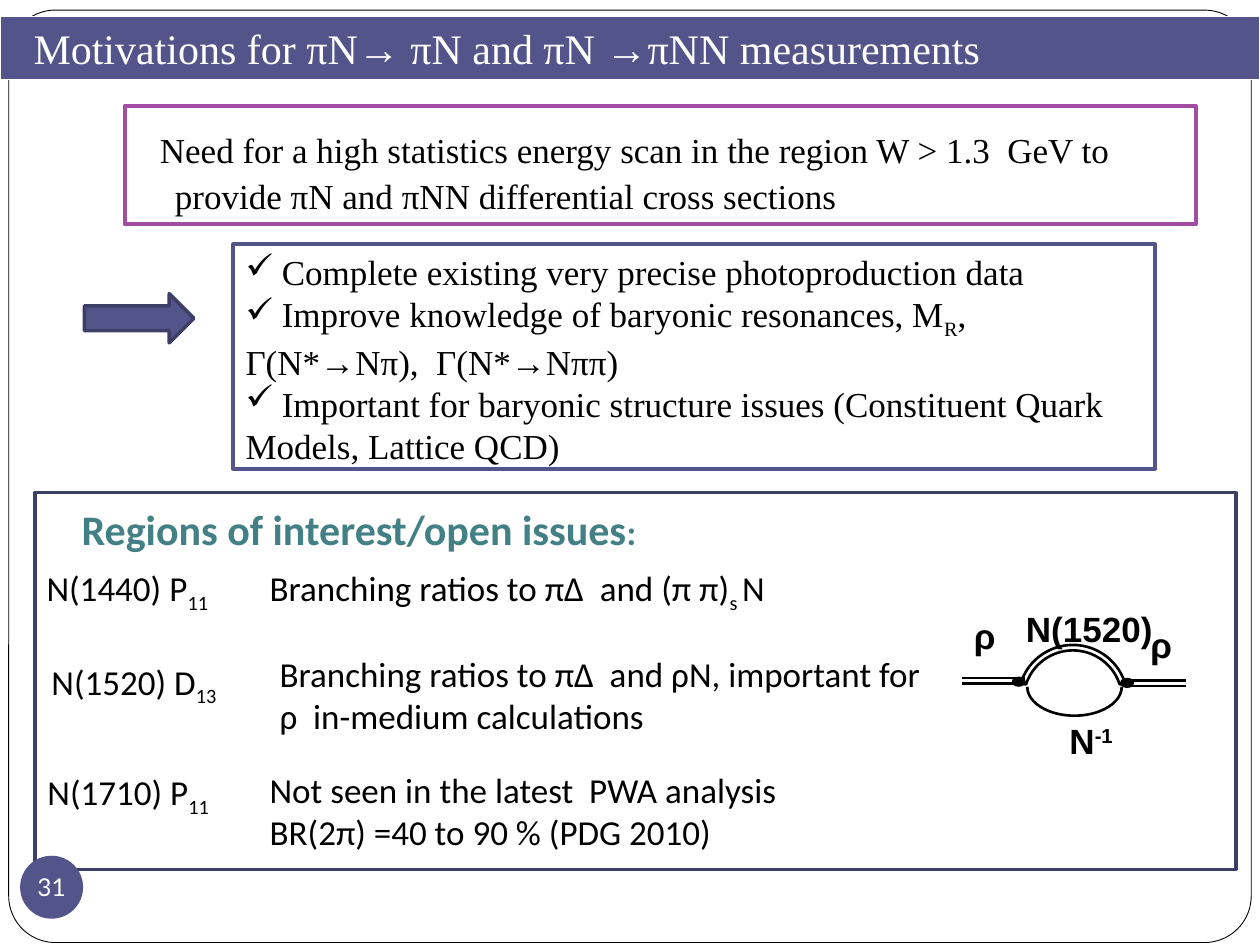
from dataclasses import dataclass

from lxml import etree
from pptx import Presentation
from pptx.dml.color import RGBColor
from pptx.enum.shapes import MSO_CONNECTOR, MSO_SHAPE
from pptx.enum.text import MSO_ANCHOR, PP_ALIGN
from pptx.oxml.ns import qn
from pptx.util import Pt

RECTANGLE = MSO_SHAPE.RECTANGLE
ROUNDED = MSO_SHAPE.ROUNDED_RECTANGLE
OVAL = MSO_SHAPE.OVAL
ARROW = MSO_SHAPE.RIGHT_ARROW
ARC = MSO_SHAPE.ARC
BLOCK_ARC = MSO_SHAPE.BLOCK_ARC
STRAIGHT = MSO_CONNECTOR.STRAIGHT
LEFT, CENTER = PP_ALIGN.LEFT, PP_ALIGN.CENTER
TOP, MIDDLE = MSO_ANCHOR.TOP, MSO_ANCHOR.MIDDLE

BLACK = RGBColor(0x00, 0x00, 0x00)
WHITE = RGBColor(0xFF, 0xFF, 0xFF)
INDIGO = RGBColor(0x53, 0x54, 0x8A)
DARK_INDIGO = RGBColor(0x3D, 0x3E, 0x66)
PURPLE = RGBColor(0xA0, 0x4D, 0xA3)
TEAL = RGBColor(0x43, 0x80, 0x86)

SERIF, SANS, LABEL, NUMBER = "Times New Roman", "Calibri", "Arial", "Lato"
DEGREE = 0.6  # angle adjustments count 60000ths, scaled by 100000


@dataclass(frozen=True)
class Box:
    left: float
    top: float
    width: float
    height: float

    def lengths(self):
        return Pt(self.left), Pt(self.top), Pt(self.width), Pt(self.height)


@dataclass(frozen=True)
class Style:
    font: str
    size: float = 20
    color: RGBColor = BLACK
    bold: bool | None = None
    align: PP_ALIGN = LEFT


@dataclass(frozen=True)
class Run:
    text: str
    baseline: int = 0
    size: float | None = None


@dataclass(frozen=True)
class Label:
    box: Box
    lines: list[list[Run]]
    style: Style
    wrap: bool = False


BODY = Style(SANS)
SYMBOL = Style(LABEL, bold=True, align=CENTER)


def sub(text):
    return Run(text, -25000)


LABELS = [
    Label(Box(147, 435.6, 307.4, 55.4),
          [[Run("Not seen in the latest  PWA analysis")],
           [Run("BR(2π) =40 to 90 % (PDG 2010)")]], BODY),
    Label(Box(147, 320.4, 302.4, 31.7),
          [[Run("Branching ratios to πΔ  and (π π)"), sub("s "), Run("N")]], BODY),
    Label(Box(19.5, 320.4, 109.4, 31.7), [[Run("N(1440) P"), sub("11")]], BODY),
    Label(Box(22.3, 373.7, 111.6, 31.7), [[Run("N(1520) D"), sub("13")]], BODY),
    Label(Box(152.7, 369.4, 388.8, 55.4),
          [[Run("Branching ratios to πΔ  and ρN, important for")],
           [Run("ρ  in-medium calculations")]], BODY),
    Label(Box(20, 437, 109.4, 31.7), [[Run("N(1710) P"), sub("11")]], BODY),
    Label(Box(39.6, 284.4, 342.7, 36),
          [[Run("Regions of interest/open issues"), Run(":", size=20)]],
          Style(SANS, 24, TEAL, True)),
    Label(Box(549.4, 347.8, 22.3, 31.7), [[Run("ρ")]], SYMBOL),
    Label(Box(650.2, 352.8, 22.3, 31.7), [[Run("ρ")]], SYMBOL),
    Label(Box(599, 407.5, 49, 31.7), [[Run("N"), Run("-1", 30000)]], SYMBOL),
    Label(Box(578.9, 343.4, 87.1, 31.7), [[Run("N(1520)")]], SYMBOL),
]

GOALS = [
    [Run(" Complete existing very precise photoproduction data")],
    [Run(" Improve knowledge of baryonic resonances, M"), sub("R"),
     Run(", Γ(N*→Nπ),  Γ(N*→Nππ)")],
    [Run(" Important for baryonic structure issues "
         "(Constituent Quark Models, Lattice QCD)")],
]


def add_box(slide, kind: MSO_SHAPE, box: Box, fill: RGBColor | None = None,
            line: RGBColor | None = None, weight: float = 1.5,
            adjustments: tuple[float, ...] = ()):
    shape = slide.shapes.add_shape(kind, *box.lengths())
    shape.shadow.inherit = False
    for index, value in enumerate(adjustments):
        shape.adjustments[index] = value
    if fill is None:
        shape.fill.background()
    else:
        shape.fill.solid()
        shape.fill.fore_color.rgb = fill
    if line is None:
        shape.line.fill.background()
    else:
        shape.line.color.rgb = line
        shape.line.width = Pt(weight)
    return shape


def write(shape, lines: list[list[Run]], style: Style, wrap: bool = True,
          anchor: MSO_ANCHOR = TOP):
    """Fill the shape with one paragraph per line and return its text frame."""
    frame = shape.text_frame
    frame.word_wrap = wrap
    frame.vertical_anchor = anchor
    for index, runs in enumerate(lines):
        paragraph = frame.paragraphs[0] if index == 0 else frame.add_paragraph()
        paragraph.alignment = style.align
        font = paragraph.font
        font.name, font.size, font.bold = style.font, Pt(style.size), style.bold
        font.color.rgb = style.color
        for item in runs:
            run = paragraph.add_run()
            run.text = item.text
            if item.size:
                run.font.size = Pt(item.size)
            if item.baseline:
                run._r.get_or_add_rPr().set("baseline", str(item.baseline))
    return frame


def add_bullet(paragraph, character: str) -> None:
    properties = paragraph._p.get_or_add_pPr()
    bullet = etree.Element(qn("a:buChar"), char=character)
    properties.insert(0, bullet)


def add_propagator(slide, left: float, y: float, length: float = 36) -> None:
    """Draw the double line of a ρ meson."""
    for height in (y, y + 3.2):
        line = slide.shapes.add_connector(
            STRAIGHT, Pt(left), Pt(height), Pt(left + length), Pt(height))
        line.line.color.rgb = BLACK
        line.line.width = Pt(1.5)
        etree.SubElement(line._element.spPr, qn("a:effectLst"))


def add_loop_diagram(slide) -> None:
    for left, top in ((578.9, 387.4), (640.8, 388.1)):
        add_box(slide, OVAL, Box(left, top, 6.5, 4.3), BLACK, BLACK)
    add_box(slide, ARC, Box(587, 376, 54, 33), line=BLACK,
            adjustments=(0, 180 * DEGREE))
    add_propagator(slide, 641.5, 388.8)
    add_propagator(slide, 550, 387.5)
    add_box(slide, BLOCK_ARC, Box(581.8, 368.6, 62.6, 62.6), line=BLACK,
            adjustments=(198 * DEGREE, 342 * DEGREE, 0.05))


def main() -> None:
    presentation = Presentation()
    presentation.slide_width, presentation.slide_height = Pt(720), Pt(540)
    slide = presentation.slides.add_slide(presentation.slide_layouts[6])

    add_box(slide, ROUNDED, Box(5, 5.8, 710, 532.8), WHITE, BLACK, 0.5, (0.05,))

    need = add_box(slide, RECTANGLE, Box(71.3, 60.5, 612, 67.7), None, PURPLE, 2.25)
    frame = write(need, [[Run("Need for a high statistics energy scan in the region "
                              "W > 1.3  GeV to provide πN and πNN differential "
                              "cross sections")]], Style(SERIF))
    frame.margin_top = Pt(11)
    paragraph = frame.paragraphs[0]
    paragraph.line_spacing = 1.09
    properties = paragraph._p.get_or_add_pPr()
    properties.set("marL", str(Pt(21.6)))
    properties.set("indent", str(Pt(-8.6)))

    add_box(slide, RECTANGLE, Box(20, 281.5, 686.2, 215.3), None, DARK_INDIGO, 2)
    add_loop_diagram(slide)
    for label in LABELS:
        text_box = slide.shapes.add_textbox(*label.box.lengths())
        write(text_box, label.lines, label.style, label.wrap)

    add_box(slide, ARROW, Box(48.2, 167.8, 62.6, 28.1), INDIGO, DARK_INDIGO, 2)
    goals = add_box(slide, RECTANGLE, Box(133.2, 139.7, 527, 128.2), None, INDIGO, 2.25)
    for paragraph in write(goals, GOALS, Style(SERIF)).paragraphs:
        add_bullet(paragraph, "✓")

    title = add_box(slide, RECTANGLE, Box(0, 9.4, 720, 36), INDIGO, WHITE, 0.75)
    frame = write(title, [[Run("Motivations for πN→ πN and πN →πNN measurements")]],
                  Style(SERIF, 24, WHITE))
    frame.margin_left = Pt(19.2)

    badge = add_box(slide, OVAL, Box(11.5, 489, 36, 36), INDIGO)
    frame = write(badge, [[Run("31")]], Style(NUMBER, 14, WHITE, align=CENTER),
                  False, MIDDLE)
    frame.margin_left = frame.margin_right = frame.margin_top = frame.margin_bottom = 0

    presentation.save("out.pptx")


if __name__ == "__main__":
    main()
